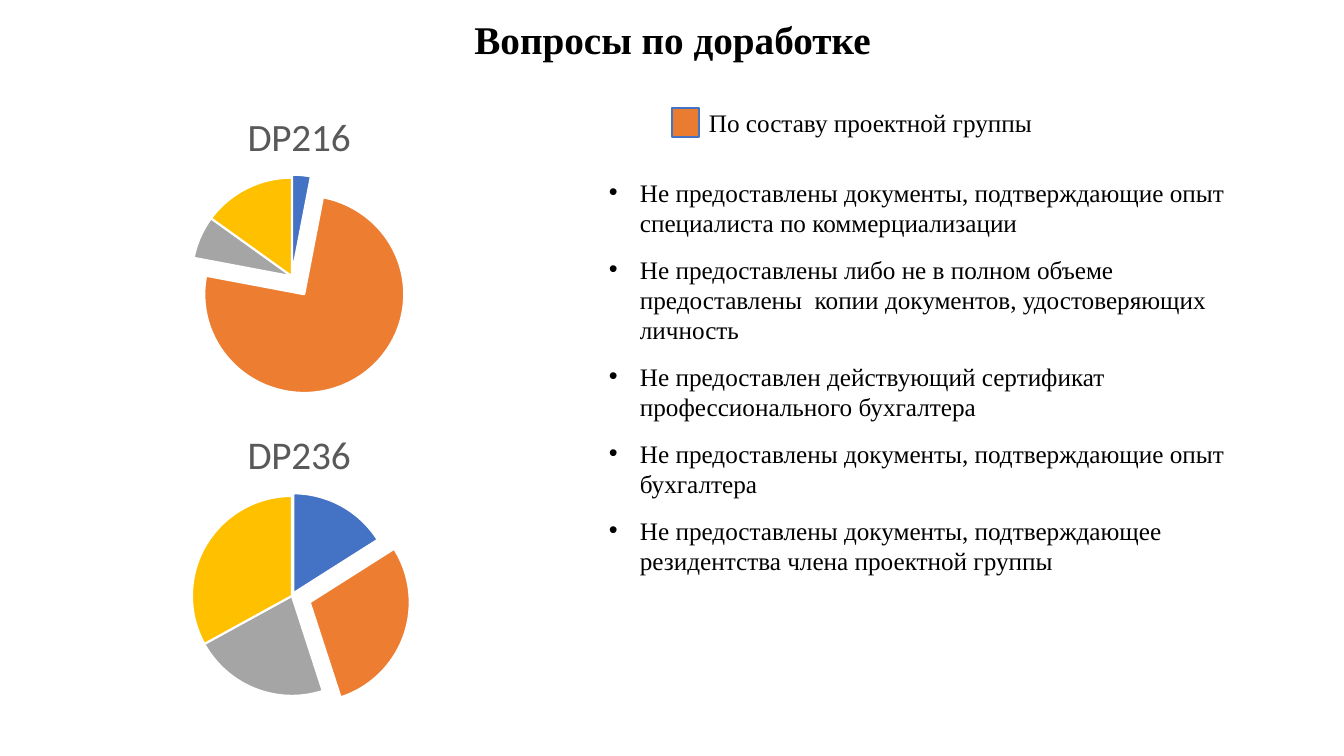
"""Build the slide of open questions with two pie charts."""
import lxml.etree
import pptx
import pptx.chart.data
import pptx.dml.color
import pptx.enum.chart
import pptx.enum.shapes
import pptx.enum.text
import pptx.oxml
import pptx.oxml.ns
import pptx.util

HEADING = "Вопросы по доработке"
LEGEND = "По составу проектной группы"
REMARKS = [
    ("Не предоставлены документы, подтверждающие опыт специалиста по коммерциализации", 2),
    ("Не предоставлены либо не в полном объеме предоставлены  копии документов, удостоверяющих личность", 3),
    ("Не предоставлен действующий сертификат профессионального бухгалтера", 2),
    ("Не предоставлены документы, подтверждающие опыт бухгалтера", 2),
    ("Не предоставлены документы, подтверждающее резидентства члена проектной группы", 2),
]
PIES = [
    ("DP216", [3, 75, 7, 15], [3, 22, 0, 0]),
    ("DP236", [16, 29, 22, 33], [3, 19, 0, 0]),
]
SLICE_COLOURS = ["4472C4", "ED7D31", "A5A5A5", "FFC000"]
SERIF = "Times New Roman"

SLIDE_W, SLIDE_H = 1344, 756
PIE_LEFT, PIE_TOP, PIE_W, PIE_H, PIE_STEP = 108, 82, 368, 312, 317
PLOT_SIZE, PLOT_TOP = 200, 97
CAPTION_LEFT, CAPTION_TOP = 133, 23
REMARK_LEFT, REMARK_TOP, REMARK_W = 599, 172, 672
LINE_H, INSETS_H, REMARK_GAP = 30, 11, 6
HANGING = 31


def px(length):
    return pptx.util.Emu(round(length * 914400 / 100.8))


def colour(hex_string):
    return pptx.dml.color.RGBColor.from_string(hex_string)


def style(font, name, size, hex_string, bold=False):
    font.name, font.size, font.bold = name, pptx.util.Pt(size), bold
    font.color.rgb = colour(hex_string)


def add_text(slide, box, text, size=18, bold=False):
    frame = slide.shapes.add_textbox(*map(px, box)).text_frame
    frame.word_wrap = True
    frame.auto_size = pptx.enum.text.MSO_AUTO_SIZE.SHAPE_TO_FIT_TEXT
    paragraph = frame.paragraphs[0]
    paragraph.text = text
    style(paragraph.font, SERIF, size, "000000", bold)
    return paragraph


def add_bullet(paragraph):
    properties = paragraph._p.get_or_add_pPr()
    properties.set("marL", str(px(HANGING)))
    properties.set("indent", str(-px(HANGING)))
    bullet_font = pptx.oxml.parse_xml(
        f'<a:buFont {pptx.oxml.ns.nsdecls("a")} typeface="Arial"/>')
    bullet = pptx.oxml.parse_xml(
        f'<a:buChar {pptx.oxml.ns.nsdecls("a")} char="•"/>')
    properties.insert(0, bullet_font)
    bullet_font.addnext(bullet)


def set_layout(part, settings, anchor):
    for old in part.findall(pptx.oxml.ns.qn("c:layout")):
        part.remove(old)
    layout = lxml.etree.Element(pptx.oxml.ns.qn("c:layout"))
    manual = lxml.etree.SubElement(layout, pptx.oxml.ns.qn("c:manualLayout"))
    for tag, value in settings.items():
        lxml.etree.SubElement(manual, pptx.oxml.ns.qn(f"c:{tag}")).set("val", str(value))
    if anchor is None:
        part.insert(0, layout)
    else:
        anchor.addnext(layout)


def add_pie(slide, top, caption, values, explosions):
    chart_data = pptx.chart.data.CategoryChartData()
    chart_data.categories = ["1", "2", "3", "4"]
    chart_data.add_series("Series 1", values)
    chart = slide.shapes.add_chart(
        pptx.enum.chart.XL_CHART_TYPE.PIE,
        px(PIE_LEFT), px(top), px(PIE_W), px(PIE_H), chart_data).chart
    style(chart.font, "Calibri", 10, "000000")
    chart.has_legend = False
    chart.has_title = True
    title = chart.chart_title
    title.include_in_layout = False
    title.text_frame.text = caption
    style(title.text_frame.paragraphs[0].font, "Calibri", 28, "595959")
    title_part = title._element
    set_layout(title_part, {
        "xMode": "edge", "yMode": "edge",
        "x": round(CAPTION_LEFT / PIE_W, 2), "y": round(CAPTION_TOP / PIE_H, 2),
    }, title_part.find(pptx.oxml.ns.qn("c:tx")))
    plot = chart.plots[0]
    plot.vary_by_categories = True
    set_layout(plot._element.getparent(), {
        "layoutTarget": "inner", "xMode": "edge", "yMode": "edge",
        "x": (PIE_W - PLOT_SIZE) / 2 / PIE_W, "y": PLOT_TOP / PIE_H,
        "w": PLOT_SIZE / PIE_W, "h": PLOT_SIZE / PIE_H,
    }, None)
    series = plot.series[0]
    for index, (hex_string, explosion) in enumerate(zip(SLICE_COLOURS, explosions)):
        piece = series.points[index].format
        piece.fill.solid()
        piece.fill.fore_color.rgb = colour(hex_string)
        piece.line.color.rgb = colour("FFFFFF")
        piece.line.width = pptx.util.Pt(1.5)
        point = series._element.findall(pptx.oxml.ns.qn("c:dPt"))[index]
        for old in point.findall(pptx.oxml.ns.qn("c:explosion")):
            point.remove(old)
        offset = lxml.etree.Element(pptx.oxml.ns.qn("c:explosion"))
        offset.set("val", str(explosion))
        point.find(pptx.oxml.ns.qn("c:spPr")).addprevious(offset)


def main():
    deck = pptx.Presentation()
    deck.slide_width, deck.slide_height = px(SLIDE_W), px(SLIDE_H)
    slide = deck.slides.add_slide(deck.slide_layouts[6])

    heading = add_text(slide, (349, 10, 647, 57), HEADING, 28, True)
    heading.alignment = pptx.enum.text.PP_ALIGN.CENTER

    for row, pie in enumerate(PIES):
        add_pie(slide, PIE_TOP + row * PIE_STEP, *pie)

    swatch = slide.shapes.add_shape(
        pptx.enum.shapes.MSO_SHAPE.RECTANGLE, *map(px, (672, 108, 27, 29)))
    swatch.shadow.inherit = False
    swatch.fill.solid()
    swatch.fill.fore_color.rgb = colour("E97C30")
    swatch.line.color.rgb = colour("4472C4")
    swatch.line.width = pptx.util.Pt(1)
    add_text(slide, (699, 102, 390, 41), LEGEND)

    top = REMARK_TOP
    for remark, lines in REMARKS:
        height = lines * LINE_H + INSETS_H
        add_bullet(add_text(slide, (REMARK_LEFT, top, REMARK_W, height), remark))
        top += height + REMARK_GAP

    deck.save("out.pptx")


if __name__ == "__main__":
    main()
